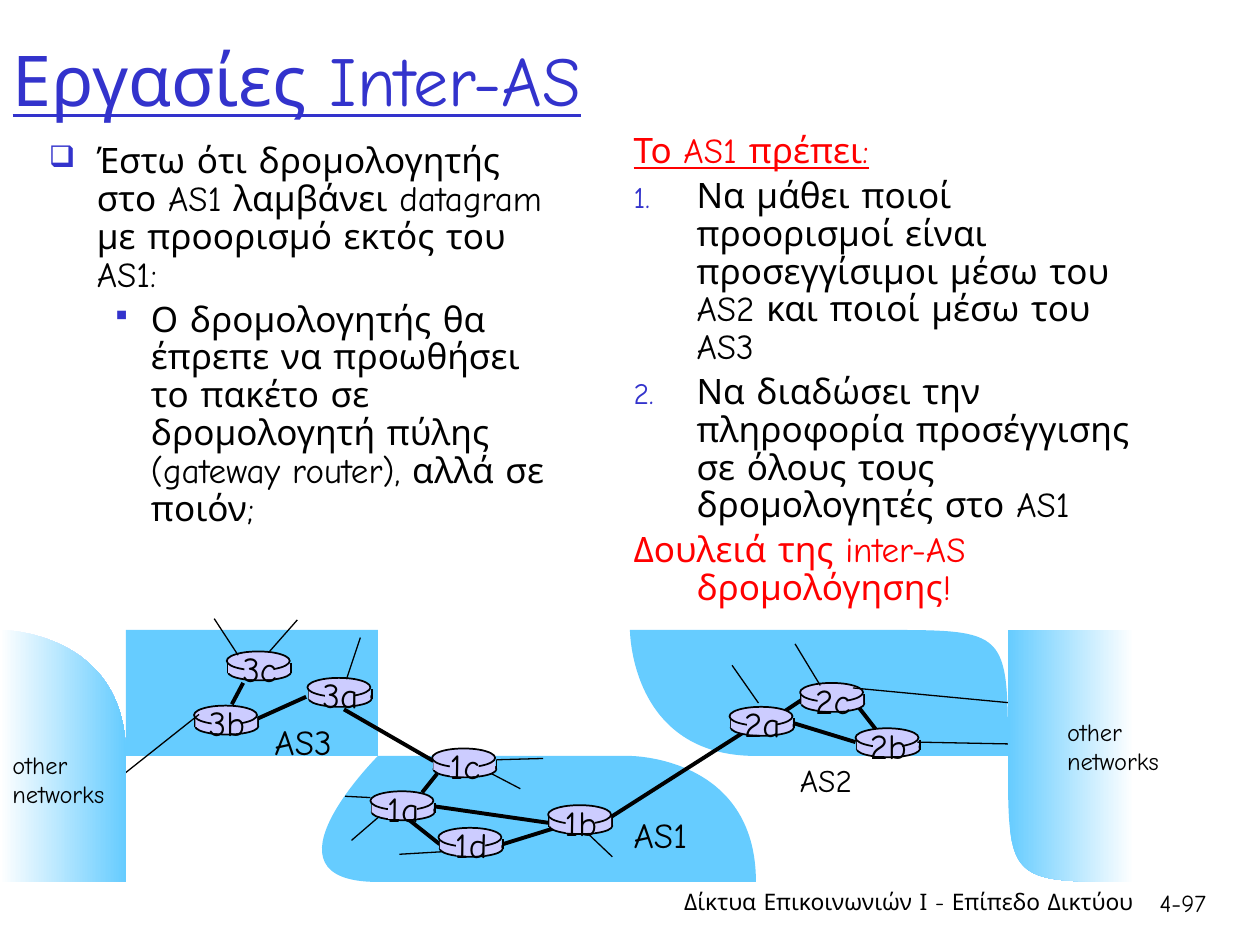
from dataclasses import dataclass
from typing import Optional

from lxml import etree
from pptx import Presentation
from pptx.dml.color import RGBColor
from pptx.enum.shapes import MSO_CONNECTOR, MSO_SHAPE
from pptx.enum.text import MSO_ANCHOR, MSO_AUTO_SIZE, PP_ALIGN
from pptx.oxml.ns import qn
from pptx.util import Inches, Pt

STRAIGHT = MSO_CONNECTOR.STRAIGHT
ELLIPSE, RECTANGLE = MSO_SHAPE.OVAL, MSO_SHAPE.RECTANGLE
LEFT, CENTER, RIGHT = PP_ALIGN.LEFT, PP_ALIGN.CENTER, PP_ALIGN.RIGHT
FONT = "Comic Neue"
COLORS = {"black": "000000", "white": "FFFFFF", "blue": "3333CC",
          "red": "FF0000", "cloud": "66CCFF", "router": "CCCCFF"}


@dataclass
class Router:
    name: str
    left: float
    top: float


@dataclass
class Item:
    text: str
    margin: float
    indent: float
    color: str = "black"
    underline: bool = False
    bullet: Optional[str] = None  # a character, or "1." for automatic numbers
    bullet_size: int = 85
    level: int = 0


@dataclass
class Label:
    text: str
    box: tuple
    size: float
    align: PP_ALIGN = LEFT
    wrap: bool = False


# Closed outlines: a start point, then three points for each Bezier curve
AS_CLOUDS = [
    [(5.44, 5.29), (5.57, 5.1), (5.8, 4.89), (6.13, 4.84), (6.45, 4.8), (7.11, 4.93),
     (7.39, 5.04), (7.68, 5.15), (7.81, 5.34), (7.85, 5.53), (7.89, 5.72), (7.84, 6.02),
     (7.63, 6.17), (7.43, 6.33), (6.96, 6.45), (6.61, 6.45), (6.26, 6.44), (5.7, 6.33),
     (5.51, 6.14), (5.31, 5.94), (5.45, 5.47), (5.44, 5.29)],
    [(1.28, 5.18), (1.39, 5.04), (1.33, 4.93), (1.43, 4.85), (1.53, 4.77), (1.65, 4.74),
     (1.88, 4.7), (2.1, 4.66), (2.58, 4.52), (2.78, 4.61), (2.98, 4.7), (3.13, 5),
     (3.1, 5.24), (3.08, 5.47), (2.86, 5.89), (2.62, 6.02), (2.37, 6.16), (1.88, 6.11),
     (1.64, 6.07), (1.4, 6.02), (1.25, 5.9), (1.19, 5.75), (1.13, 5.6), (1.26, 5.3),
     (1.28, 5.18)],
    [(2.74, 6.12), (2.84, 5.96), (3.03, 5.91), (3.25, 5.84), (3.46, 5.78), (3.76, 5.7),
     (4.01, 5.74), (4.26, 5.78), (4.5, 5.94), (4.76, 6.07), (5.03, 6.2), (5.55, 6.37),
     (5.59, 6.51), (5.63, 6.65), (5.29, 6.84), (5, 6.91), (4.7, 6.98), (4.22, 6.95),
     (3.82, 6.93), (3.42, 6.92), (2.78, 6.96), (2.6, 6.82), (2.42, 6.69), (2.63, 6.29),
     (2.74, 6.12)],
]
RIGHT_NETWORK = [
    (8.01, 5.67), (8.07, 5.51), (8.15, 5.39), (8.33, 5.29), (8.51, 5.19), (8.98, 4.99),
    (9.11, 5.09), (9.24, 5.18), (9.1, 5.59), (9.11, 5.87), (9.11, 6.16), (9.23, 6.65),
    (9.13, 6.78), (9.04, 6.91), (8.73, 6.72), (8.55, 6.66), (8.36, 6.6), (8.14, 6.56),
    (8.05, 6.39), (7.96, 6.23), (8.02, 5.82), (8.01, 5.67)]
LEFT_NETWORK = [(9.24 - x, y + 0.24) for x, y in RIGHT_NETWORK]

ROUTERS = [
    Router("3b", 1.54, 5.6), Router("1d", 3.48, 6.57), Router("3a", 2.44, 5.38),
    Router("1c", 3.43, 5.94), Router("2a", 5.79, 5.61), Router("1a", 2.94, 6.28),
    Router("2c", 6.35, 5.42), Router("2b", 6.79, 5.78), Router("1b", 4.35, 6.39),
    Router("3c", 1.8, 5.17)]
# Lines as (from x, from y, to x, to y)
LINKS = [
    (6.3, 5.74, 6.79, 5.89), (6.82, 5.62, 6.96, 5.8), (6.19, 5.67, 6.37, 5.55),
    (3.99, 6.7, 4.41, 6.57), (3.25, 6.51, 3.49, 6.7), (3.45, 6.4, 4.35, 6.53),
    (3.35, 6.29, 3.47, 6.14), (2.03, 5.71, 2.43, 5.53), (2.73, 5.63, 3.44, 6.04),
    (4.84, 6.49, 5.89, 5.82)]
LINK_3C_3B = (1.93, 5.42, 1.84, 5.59)
STUBS = [
    (0.95, 6.17, 1.58, 5.67), (2.36, 4.92, 2.14, 5.17), (1.7, 4.91, 1.89, 5.2),
    (2.86, 5.06, 2.75, 5.39), (7.28, 5.89, 8.29, 5.91), (6.77, 5.46, 8.25, 5.6),
    (6.51, 5.44, 6.31, 5.11), (6.02, 5.58, 5.81, 5.28), (3.01, 6.48, 2.79, 6.67),
    (2.94, 6.33, 2.74, 6.32), (3.51, 6.76, 3.17, 6.78), (3.94, 6.03, 4.31, 6.02),
    (4.67, 6.62, 4.86, 6.8), (3.9, 6.14, 4.13, 6.26)]
LABELS = [
    Label("AS3", (2.08, 5.67, 0.77, 0.43), 20),
    Label("AS1", (4.93, 6.41, 0.72, 0.43), 20),
    Label("AS2", (6.25, 5.99, 0.71, 0.4), 18),
    Label("other\nnetworks", (8.37, 5.64, 0.98, 0.57), 14),
    Label("other\nnetworks", (0, 5.9, 0.98, 0.57), 14),
    Label("Δίκτυα Επικοινωνιών Ι - Επίπεδο Δικτύου", (5.28, 7, 3.81, 0.5), 13, RIGHT, True),
    Label("4-97", (8.93, 7, 0.74, 0.5), 14, RIGHT, True)]

PROBLEM = [
    Item("Έστω ότι δρομολογητής στο AS1 λαμβάνει datagram με προορισμό εκτός του AS1:",
         0.38, -0.38, bullet="❑"),
    Item("Ο δρομολογητής θα έπρεπε να προωθήσει το πακέτο σε δρομολογητή πύλης "
         "(gateway router), αλλά σε ποιόν;", 0.81, -0.31, bullet="▪", bullet_size=75, level=1)]
TASKS = [
    Item("Το AS1 πρέπει:", 0.5, -0.5, "red", True),
    Item("Να μάθει ποιοί προορισμοί είναι προσεγγίσιμοι μέσω του AS2 και ποιοί μέσω του AS3",
         0.5, -0.5, bullet="1."),
    Item("Να διαδώσει την πληροφορία προσέγγισης σε όλους τους δρομολογητές στο AS1",
         0.5, -0.5, bullet="1."),
    Item("Δουλειά της inter-AS δρομολόγησης!", 0.5, -0.5, "red")]


def rgb(name: str) -> RGBColor:
    return RGBColor.from_string(COLORS[name])


def format_runs(paragraph, size: float, color: str = "black", underline: bool = False) -> None:
    for run in paragraph.runs:
        run.font.name, run.font.size = FONT, Pt(size)
        run.font.color.rgb = rgb(color)
        run.font.underline = underline


def add_line(slide, ends: tuple, weight: float) -> None:
    line = slide.shapes.add_connector(STRAIGHT, *map(Inches, ends))
    line.line.color.rgb, line.line.width = rgb("black"), Pt(weight)
    etree.SubElement(line.element.spPr, qn("a:effectLst"))


def add_cloud(slide, points: list, fade: Optional[tuple] = None) -> None:
    builder = slide.shapes.build_freeform(*points[0], scale=Inches(1))
    builder.add_line_segments(points[1:], close=True)
    shape = builder.convert_to_shape()
    # Merge every three straight segments into one Bezier curve
    segments = list(shape.element.iter(qn("a:lnTo")))
    for first in range(0, len(segments), 3):
        curve = etree.Element(qn("a:cubicBezTo"))
        segments[first].addprevious(curve)
        for segment in segments[first:first + 3]:
            curve.append(segment[0])
            segment.getparent().remove(segment)
    shape.shadow.inherit = False
    shape.line.fill.background()
    if fade:
        shape.fill.gradient()
        shape.fill.gradient_angle = 0
        for stop, color in zip(shape.fill.gradient_stops, fade):
            stop.color.rgb = rgb(color)
    else:
        shape.fill.solid()
        shape.fill.fore_color.rgb = rgb("cloud")


def add_label(slide, label: Label) -> None:
    frame = slide.shapes.add_textbox(*map(Inches, label.box)).text_frame
    frame.text = label.text
    frame.word_wrap = label.wrap
    frame.auto_size = MSO_AUTO_SIZE.NONE if label.wrap else MSO_AUTO_SIZE.SHAPE_TO_FIT_TEXT
    for paragraph in frame.paragraphs:
        paragraph.alignment = label.align
        format_runs(paragraph, label.size)


def add_part(slide, kind: MSO_SHAPE, box: tuple, outlined: bool) -> None:
    part = slide.shapes.add_shape(kind, *map(Inches, box))
    part.shadow.inherit = False
    part.fill.solid()
    part.fill.fore_color.rgb = rgb("router")
    if outlined:
        part.line.color.rgb, part.line.width = rgb("black"), Pt(1)
    else:
        part.line.fill.background()


def add_router(slide, router: Router) -> None:
    x, y = router.left, router.top
    add_part(slide, ELLIPSE, (x + 0.01, y + 0.1, 0.5, 0.13), True)
    for side in (x + 0.01, x + 0.51):
        add_line(slide, (side, y + 0.09, side, y + 0.17), 1)
    add_part(slide, RECTANGLE, (x + 0.01, y + 0.09, 0.49, 0.08), False)
    add_part(slide, ELLIPSE, (x, y, 0.5, 0.15), True)
    add_part(slide, RECTANGLE, (x + 0.14, y + 0.02, 0.23, 0.2), False)
    add_label(slide, Label(router.name, (x, y - 0.08, 0.52, 0.43), 20, CENTER))


def add_items(slide, box: tuple, items: list) -> None:
    frame = slide.shapes.add_textbox(*map(Inches, box)).text_frame
    frame.word_wrap = True
    for index, item in enumerate(items):
        paragraph = frame.add_paragraph() if index else frame.paragraphs[0]
        paragraph.text, paragraph.level = item.text, item.level
        paragraph.line_spacing, paragraph.space_before = 0.9, Pt(4)
        format_runs(paragraph, 20, item.color, item.underline)
        properties = paragraph._p.get_or_add_pPr()
        properties.set("marL", str(Inches(item.margin)))
        properties.set("indent", str(Inches(item.indent)))
        if not item.bullet:
            etree.SubElement(properties, qn("a:buNone"))
            continue
        color = etree.SubElement(properties, qn("a:buClr"))
        etree.SubElement(color, qn("a:srgbClr"), val=COLORS["blue"])
        etree.SubElement(properties, qn("a:buSzPct"), val=str(item.bullet_size * 1000))
        if item.bullet == "1.":
            etree.SubElement(properties, qn("a:buAutoNum"), type="arabicPeriod")
        else:
            etree.SubElement(properties, qn("a:buChar"), char=item.bullet)


def main() -> None:
    presentation = Presentation()
    presentation.slide_width, presentation.slide_height = Inches(10), Inches(7.5)
    slide = presentation.slides.add_slide(presentation.slide_layouts[5])

    # Title
    title = slide.shapes.title
    title.left, title.top, title.width, title.height = map(Inches, (0, 0, 8.5, 1.25))
    title.text_frame.text = "Εργασίες Inter-AS"
    title.text_frame.vertical_anchor = MSO_ANCHOR.MIDDLE
    title.text_frame.auto_size = MSO_AUTO_SIZE.NONE
    title.text_frame.paragraphs[0].alignment = LEFT
    format_runs(title.text_frame.paragraphs[0], 40, "blue", True)

    # Network diagram
    for points in AS_CLOUDS:
        add_cloud(slide, points)
    for ends in LINKS:
        add_line(slide, ends, 2.25)
    for router in ROUTERS:
        add_router(slide, router)
    add_line(slide, LINK_3C_3B, 2.25)
    for ends in STUBS:
        add_line(slide, ends, 0.75)
    add_cloud(slide, RIGHT_NETWORK, ("cloud", "white"))
    add_cloud(slide, LEFT_NETWORK, ("white", "cloud"))

    # Text columns, labels and footer
    add_items(slide, (0.29, 1.09, 4.17, 3.19), PROBLEM)
    add_items(slide, (4.93, 1.01, 4.17, 5.08), TASKS)
    for label in LABELS:
        add_label(slide, label)

    presentation.save("out.pptx")


if __name__ == "__main__":
    main()
